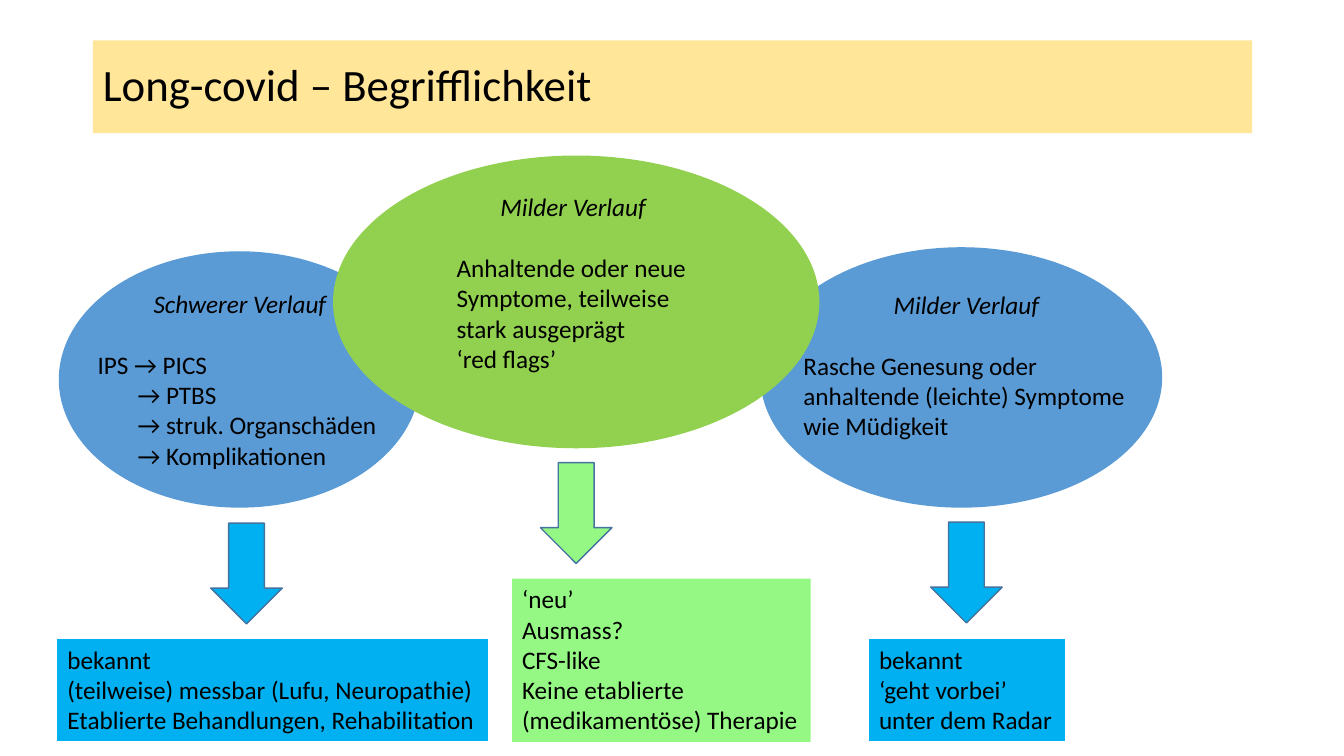
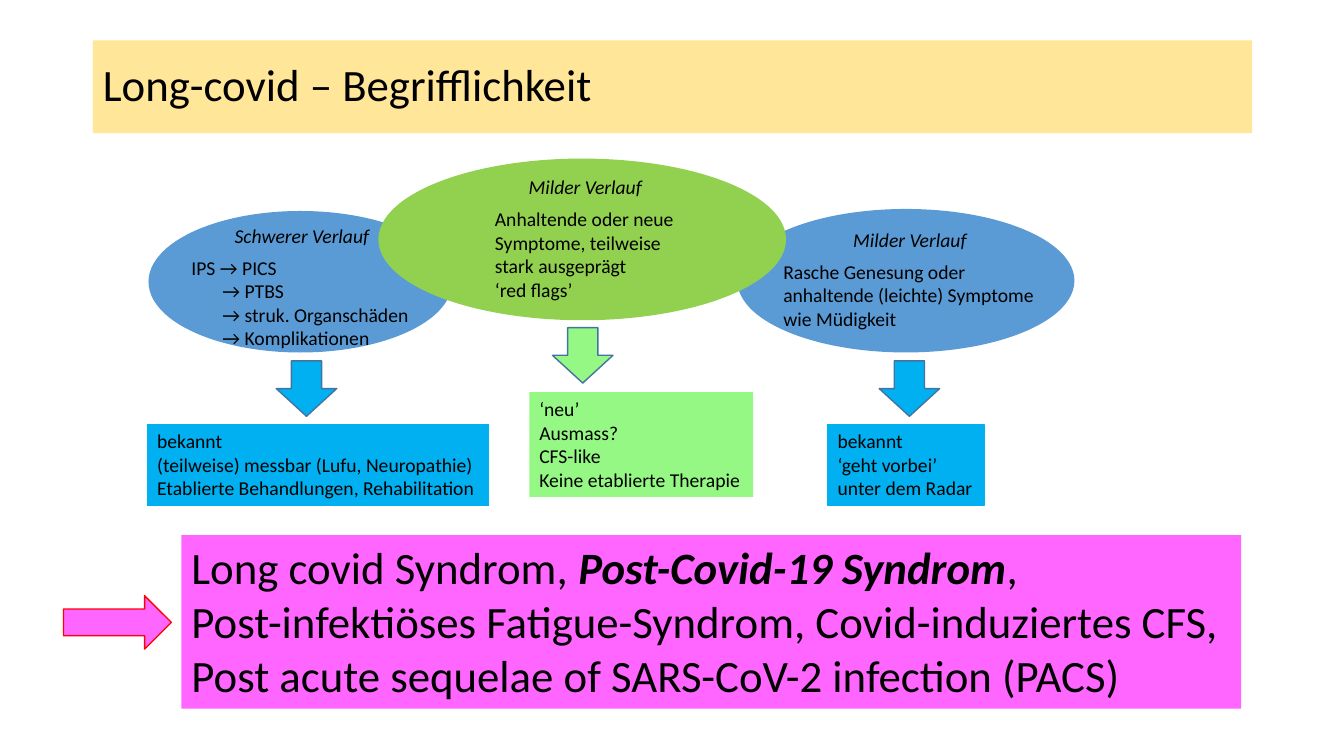
"""Build two slides that sort out the terms around long covid."""
from dataclasses import dataclass
from typing import Any

from lxml.etree import SubElement
from pptx import Presentation
from pptx.dml.color import RGBColor
from pptx.enum.shapes import MSO_SHAPE
from pptx.enum.text import MSO_ANCHOR, MSO_AUTO_SIZE, PP_ALIGN
from pptx.util import Inches, Pt

Box = tuple[float, float, float, float]

FONT = "Calibri"
BLACK = "000000"
SAND = "FFE699"
BLUE = "5B9BD5"
GREEN = "92D050"
SKY = "00B0F0"
MINT = "95F884"
STEEL = "43739E"
PINK = "FF66FF"
RED = "FF0000"
TITLE = "Long-covid – Begrifflichkeit"


@dataclass(frozen=True)
class Run:
    """A piece of text with its style."""
    text: str
    bold: bool = False
    slant: bool = False


@dataclass(frozen=True)
class Line:
    """A paragraph made of runs."""
    runs: tuple[Run, ...]
    mid: bool = False
    gap: float = 0
    dent: float = 0


@dataclass(frozen=True)
class Course:
    """A course of illness and what is known of it."""
    head: str
    signs: tuple[str, ...]
    facts: tuple[str, ...]
    oval: str
    card: str
    edge: str | None


@dataclass(frozen=True)
class Place:
    """Where the parts of one course stand."""
    oval: Box
    note: Box
    arrow: Box
    card: Box
    more: tuple[str, ...] = ()


@dataclass(frozen=True)
class Chart:
    """One drawing of all courses."""
    size: float
    gap: float
    spots: tuple[Place, ...]


COURSES = (
    Course("Milder Verlauf",
           ("Rasche Genesung oder", "anhaltende (leichte) Symptome", "wie Müdigkeit"),
           ("bekannt", "‘geht vorbei’", "unter dem Radar"), BLUE, SKY, SKY),
    Course("Schwerer Verlauf",
           ("IPS → PICS", "→ PTBS", "→ struk. Organschäden", "→ Komplikationen"),
           ("bekannt", "(teilweise) messbar (Lufu, Neuropathie)",
            "Etablierte Behandlungen, Rehabilitation"), BLUE, SKY, SKY),
    Course("Milder Verlauf",
           ("Anhaltende oder neue", "Symptome, teilweise", "stark ausgeprägt", "‘red flags’"),
           ("‘neu’", "Ausmass?", "CFS-like"), GREEN, MINT, None),
)

LARGE = Chart(18, 22, (
    Place((7.55, 2.46, 3.97, 2.57), (7.87, 2.82, 3.43, 1.62),
          (9.23, 5.18, 0.71, 1), (8.62, 6.34, 1.94, 1.01)),
    Place((0.59, 2.5, 3.57, 2.53), (0.87, 2.81, 3.02, 1.92),
          (2.09, 5.19, 0.71, 1), (0.57, 6.34, 4.27, 1.01)),
    Place((3.31, 1.55, 4.81, 2.89), (4.43, 1.85, 2.51, 1.92),
          (5.36, 4.59, 0.71, 1), (5.08, 5.74, 2.96, 1.62),
          ("Keine etablierte", "(medikamentöse) Therapie")),
))

SMALL = Chart(14, 6, (
    Place((7.32, 2.08, 3.33, 1.41), (7.67, 2.21, 2.71, 1.13),
          (8.72, 3.58, 0.6, 0.55), (8.21, 4.21, 1.55, 0.81)),
    Place((1.48, 2.1, 3, 1.39), (1.8, 2.17, 2.39, 1.4),
          (2.74, 3.58, 0.6, 0.55), (1.46, 4.21, 3.39, 0.81)),
    Place((3.76, 1.58, 4.03, 1.59), (4.81, 1.69, 1.99, 1.4),
          (5.48, 3.25, 0.6, 0.55), (5.25, 3.89, 2.22, 1.04),
          ("Keine etablierte Therapie",)),
))

TERMS = (
    Line((Run("Long covid Syndrom, "), Run("Post-Covid-19 Syndrom", True, True), Run(","))),
    Line((Run("Post-infektiöses Fatigue-Syndrom, Covid-induziertes CFS,"),)),
    Line((Run("Post acute sequelae of SARS-CoV-2 infection (PACS)"),)),
)


def tint(text: str) -> RGBColor:
    """Turn a hex string into a colour."""
    return RGBColor.from_string(text)


def paint(shape: Any, fill: str, edge: str | None = None, width: float = 1) -> None:
    """Set the fill and the outline of a shape."""
    shape.fill.solid()
    shape.fill.fore_color.rgb = tint(fill)
    if edge:
        shape.line.color.rgb = tint(edge)
        shape.line.width = Pt(width)
    else:
        shape.line.fill.background()


def add_form(shapes: Any, kind: MSO_SHAPE, box: Box, fill: str, edge: str) -> None:
    """Draw a preset shape without text."""
    shape = shapes.add_shape(kind, *map(Inches, box))
    shape.shadow.inherit = False
    paint(shape, fill, edge)


def write(frame: Any, lines: tuple[Line, ...], size: float) -> None:
    """Fill a text frame run by run."""
    for num, line in enumerate(lines):
        para = frame.add_paragraph() if num else frame.paragraphs[0]
        if line.dent:
            props = para._p.get_or_add_pPr()
            props.set("marL", str(Inches(line.dent)))
            props.set("indent", "0")
        para.alignment = PP_ALIGN.CENTER if line.mid else PP_ALIGN.LEFT
        if line.gap:
            para.space_before = Pt(line.gap)
        for part in line.runs:
            run = para.add_run()
            run.text = part.text
            font = run.font
            font.name, font.size = FONT, Pt(size)
            font.bold, font.italic = part.bold, part.slant
            font.color.rgb = tint(BLACK)


def add_text(shapes: Any, box: Box, lines: tuple[Line, ...], size: float) -> Any:
    """Add a text box that grows with its text."""
    shape = shapes.add_textbox(*map(Inches, box))
    frame = shape.text_frame
    frame.word_wrap = False
    frame.auto_size = MSO_AUTO_SIZE.SHAPE_TO_FIT_TEXT
    write(frame, lines, size)
    return shape


def add_slide(deck: Any) -> Any:
    """Add a slide with the shared title band."""
    slide = deck.slides.add_slide(deck.slide_layouts[5])
    title = slide.shapes.title
    title.left, title.top, title.width, title.height = map(Inches, (0.92, 0.4, 11.5, 0.92))
    paint(title, SAND)
    frame = title.text_frame
    frame.word_wrap = True
    frame.auto_size = MSO_AUTO_SIZE.NONE
    frame.vertical_anchor = MSO_ANCHOR.MIDDLE
    write(frame, (Line((Run(TITLE),)),), 32)
    frame.paragraphs[0].line_spacing = 0.9
    return slide


def sign_lines(course: Course, chart: Chart) -> tuple[Line, ...]:
    """Set the head above the signs and indent the arrow lines."""
    head = Line((Run(course.head, slant=True),), mid=True)
    signs = (Line((Run(sign),), gap=0 if num else chart.gap,
                  dent=0.022 * chart.size if sign.startswith("→") else 0)
             for num, sign in enumerate(course.signs))
    return head, *signs


def draw(shapes: Any, chart: Chart) -> None:
    """Draw the ovals, then the notes, arrows and cards."""
    pairs = tuple(zip(COURSES, chart.spots))
    for course, spot in pairs:
        add_form(shapes, MSO_SHAPE.OVAL, spot.oval, course.oval, course.oval)
    for course, spot in pairs:
        add_text(shapes, spot.note, sign_lines(course, chart), chart.size)
        add_form(shapes, MSO_SHAPE.DOWN_ARROW, spot.arrow, course.card, STEEL)
        facts = tuple(Line((Run(fact),)) for fact in course.facts + spot.more)
        card = add_text(shapes, spot.card, facts, chart.size)
        paint(card, course.card, course.edge, 0.75)


def main() -> None:
    """Build and save the deck."""
    deck = Presentation()
    deck.slide_width, deck.slide_height = Inches(13.33), Inches(7.5)
    draw(add_slide(deck).shapes, LARGE)
    shapes = add_slide(deck).shapes
    draw(shapes.add_group_shape().shapes, SMALL)
    add_form(shapes, MSO_SHAPE.RIGHT_ARROW, (0.63, 5.91, 1.07, 0.53), PINK, RED)
    paint(add_text(shapes, (1.8, 5.31, 10.51, 1.72), TERMS, 32), PINK)
    deck.save("out.pptx")


if __name__ == "__main__":
    main()
